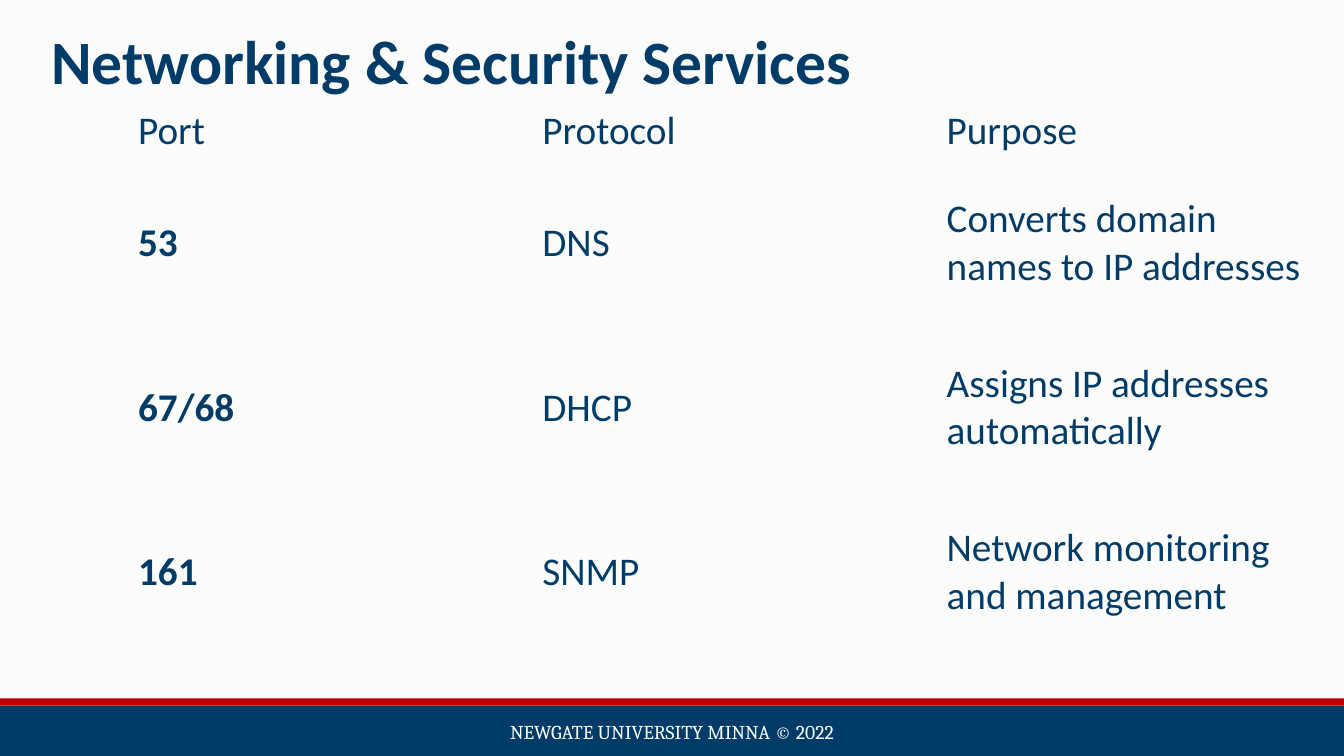
from dataclasses import dataclass

from lxml import etree
from pptx import Presentation
from pptx.dml.color import RGBColor
from pptx.enum.shapes import MSO_SHAPE
from pptx.enum.text import MSO_ANCHOR, MSO_AUTO_SIZE, PP_ALIGN
from pptx.util import Inches, Pt

RECTANGLE = MSO_SHAPE.RECTANGLE
MIDDLE = MSO_ANCHOR.MIDDLE
LEFT, CENTER = PP_ALIGN.LEFT, PP_ALIGN.CENTER
NO_AUTOFIT = MSO_AUTO_SIZE.NONE
TITLE_ONLY_LAYOUT = 5
PLAIN_TABLE_STYLE = "{2D5ABB26-0587-4C30-8999-92F81FD0307C}"

SLIDE_WIDTH, SLIDE_HEIGHT = 13.33, 7.5
CONTENT_WIDTH = 12.03
TABLE_TOP = 1.01
HEADER_HEIGHT, ROW_HEIGHT = 0.59, 1.63
BAND_HEIGHT, STRIPE_HEIGHT = 0.5, 0.07

SERVICES = [
    ("Port", "Protocol", "Purpose"),
    ("53", "DNS", "Converts domain names to IP addresses"),
    ("67/68", "DHCP", "Assigns IP addresses automatically"),
    ("161", "SNMP", "Network monitoring and management"),
]


@dataclass(frozen=True)
class Theme:
    """Colours, fonts and type sizes of the slide."""
    background: str = "FCFCFC"
    navy: str = "013C68"
    red: str = "C00000"
    white: str = "FFFFFF"
    main_font: str = "Calibri"
    footer_font: str = "Cambria"
    title_size: int = 44
    table_size: int = 28
    footer_size: int = 14


THEME = Theme()


def write(text_frame, text, size, color, font=THEME.main_font, bold=False, align=LEFT):
    """Put one formatted paragraph into a text frame."""
    text_frame.text = text
    text_frame.word_wrap = True
    paragraph = text_frame.paragraphs[0]
    paragraph.alignment = align
    for run in paragraph.runs:
        run.font.name = font
        run.font.size = Pt(size)
        run.font.bold = bold
        run.font.color.rgb = RGBColor.from_string(color)


def add_band(slide, top, height, color):
    """Add a plain bar across the full slide width."""
    band = slide.shapes.add_shape(
        RECTANGLE, 0, Inches(top), Inches(SLIDE_WIDTH), Inches(height))
    band.shadow.inherit = False
    band.fill.solid()
    band.fill.fore_color.rgb = RGBColor.from_string(color)
    band.line.fill.background()


def add_footer(slide, text):
    """Add the two bars at the bottom and the centred footer text."""
    band_top = SLIDE_HEIGHT - BAND_HEIGHT
    add_band(slide, band_top, BAND_HEIGHT, THEME.navy)
    add_band(slide, band_top - STRIPE_HEIGHT, STRIPE_HEIGHT, THEME.red)
    width, height = 5.27, 0.4
    footer = slide.shapes.add_textbox(
        Inches((SLIDE_WIDTH - width) / 2), Inches(band_top + 0.06),
        Inches(width), Inches(height))
    footer.text_frame.vertical_anchor = MIDDLE
    write(footer.text_frame, text, THEME.footer_size, THEME.white,
          font=THEME.footer_font, align=CENTER)


def set_title(slide, text):
    """Place and format the title placeholder."""
    title = slide.shapes.title
    title.left, title.top = Inches(0.41), Inches(0.17)
    title.width, title.height = Inches(CONTENT_WIDTH), Inches(0.84)
    title.text_frame.vertical_anchor = MIDDLE
    title.text_frame.auto_size = NO_AUTOFIT
    write(title.text_frame, text, THEME.title_size, THEME.navy, bold=True)


def add_services_table(slide, rows):
    """Add the unfilled table with bold port numbers below its header."""
    height = HEADER_HEIGHT + ROW_HEIGHT * (len(rows) - 1)
    table = slide.shapes.add_table(
        len(rows), len(rows[0]), Inches(1.27), Inches(TABLE_TOP),
        Inches(CONTENT_WIDTH), Inches(height)).table
    table.first_row = table.horz_banding = False
    properties = table._tbl.tblPr
    for style in list(properties):
        properties.remove(style)
    style = etree.SubElement(
        properties, "{http://schemas.openxmlformats.org/drawingml/2006/main}tableStyleId")
    style.text = PLAIN_TABLE_STYLE
    for row_index, values in enumerate(rows):
        table.rows[row_index].height = Inches(ROW_HEIGHT if row_index else HEADER_HEIGHT)
        for column_index, value in enumerate(values):
            cell = table.cell(row_index, column_index)
            cell.fill.background()
            cell.vertical_anchor = MIDDLE
            write(cell.text_frame, value, THEME.table_size, THEME.navy,
                  bold=row_index > 0 and column_index == 0)


def main():
    """Build the slide and save it."""
    presentation = Presentation()
    presentation.slide_width = Inches(SLIDE_WIDTH)
    presentation.slide_height = Inches(SLIDE_HEIGHT)
    slide = presentation.slides.add_slide(presentation.slide_layouts[TITLE_ONLY_LAYOUT])
    slide.background.fill.solid()
    slide.background.fill.fore_color.rgb = RGBColor.from_string(THEME.background)
    add_footer(slide, "NEWGATE UNIVERSITY MINNA ©️ 2022")
    set_title(slide, "Networking & Security Services")
    add_services_table(slide, SERVICES)
    presentation.save("out.pptx")


if __name__ == "__main__":
    main()
